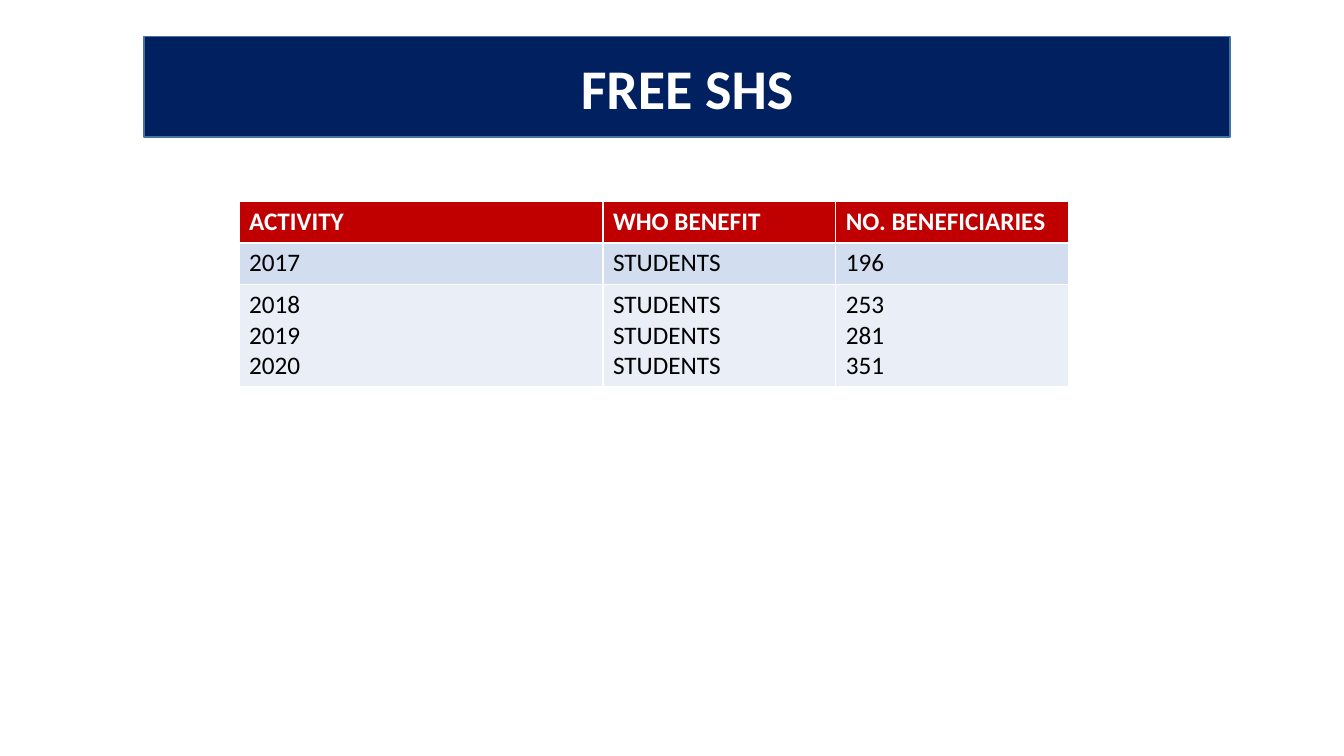
"""Build the FREE SHS slide: a title banner above a table of beneficiaries by year."""
import pptx
import pptx.util
import pptx.dml.color
import pptx.enum.shapes
import pptx.enum.text

THEME = {
    "font": "Calibri",
    "title_size": 40,
    "table_size": 18,
    "banner": "002060",
    "banner_line": "43739E",
    "header": "C00000",
    "bands": ["D2DEEF", "EAEFF7"],
    "light": "FFFFFF",
    "dark": "000000",
}


def color(key):
    return pptx.dml.color.RGBColor.from_string(THEME.get(key, key))


def style(paragraph, size, ink, bold):
    paragraph.font.name = THEME["font"]
    paragraph.font.size = pptx.util.Pt(THEME[size])
    paragraph.font.bold = bold
    paragraph.font.color.rgb = color(ink)


presentation = pptx.Presentation()
presentation.slide_width = pptx.util.Inches(13.33)
presentation.slide_height = pptx.util.Inches(7.5)
slide = presentation.slides.add_slide(presentation.slide_layouts[6])

banner = slide.shapes.add_shape(
    pptx.enum.shapes.MSO_SHAPE.RECTANGLE,
    pptx.util.Inches(1.43), pptx.util.Inches(0.36),
    pptx.util.Inches(10.77), pptx.util.Inches(1),
)
banner.shadow.inherit = False
banner.fill.solid()
banner.fill.fore_color.rgb = color("banner")
banner.line.color.rgb = color("banner_line")
banner.line.width = pptx.util.Pt(1)
banner.text_frame.vertical_anchor = pptx.enum.text.MSO_ANCHOR.MIDDLE
title = banner.text_frame.paragraphs[0]
title.text = "FREE SHS"
title.alignment = pptx.enum.text.PP_ALIGN.CENTER
style(title, "title_size", "light", True)

beneficiary_rows = [
    ["ACTIVITY", "WHO BENEFIT", "NO. BENEFICIARIES"],
    ["2017", "STUDENTS", "196"],
    ["2018\n2019\n2020", "STUDENTS\nSTUDENTS\nSTUDENTS", "253\n281\n351"],
]
column_widths = [3.61, 2.31, 2.31]
row_heights = [0.41, 0.41, 1.01]

beneficiaries = slide.shapes.add_table(
    len(row_heights), len(column_widths),
    pptx.util.Inches(2.37), pptx.util.Inches(2),
    pptx.util.Inches(sum(column_widths)), pptx.util.Inches(sum(row_heights)),
).table
for column, width in zip(beneficiaries.columns, column_widths):
    column.width = pptx.util.Inches(width)
for row, height in zip(beneficiaries.rows, row_heights):
    row.height = pptx.util.Inches(height)

row_fills = [THEME["header"], *THEME["bands"]]
for row_index, (entries, row_fill) in enumerate(zip(beneficiary_rows, row_fills)):
    is_header = row_index == 0
    for column_index, entry in enumerate(entries):
        cell = beneficiaries.cell(row_index, column_index)
        cell.text = entry
        cell.fill.solid()
        cell.fill.fore_color.rgb = color(row_fill)
        for paragraph in cell.text_frame.paragraphs:
            style(paragraph, "table_size", "light" if is_header else "dark", is_header)

presentation.save("out.pptx")
